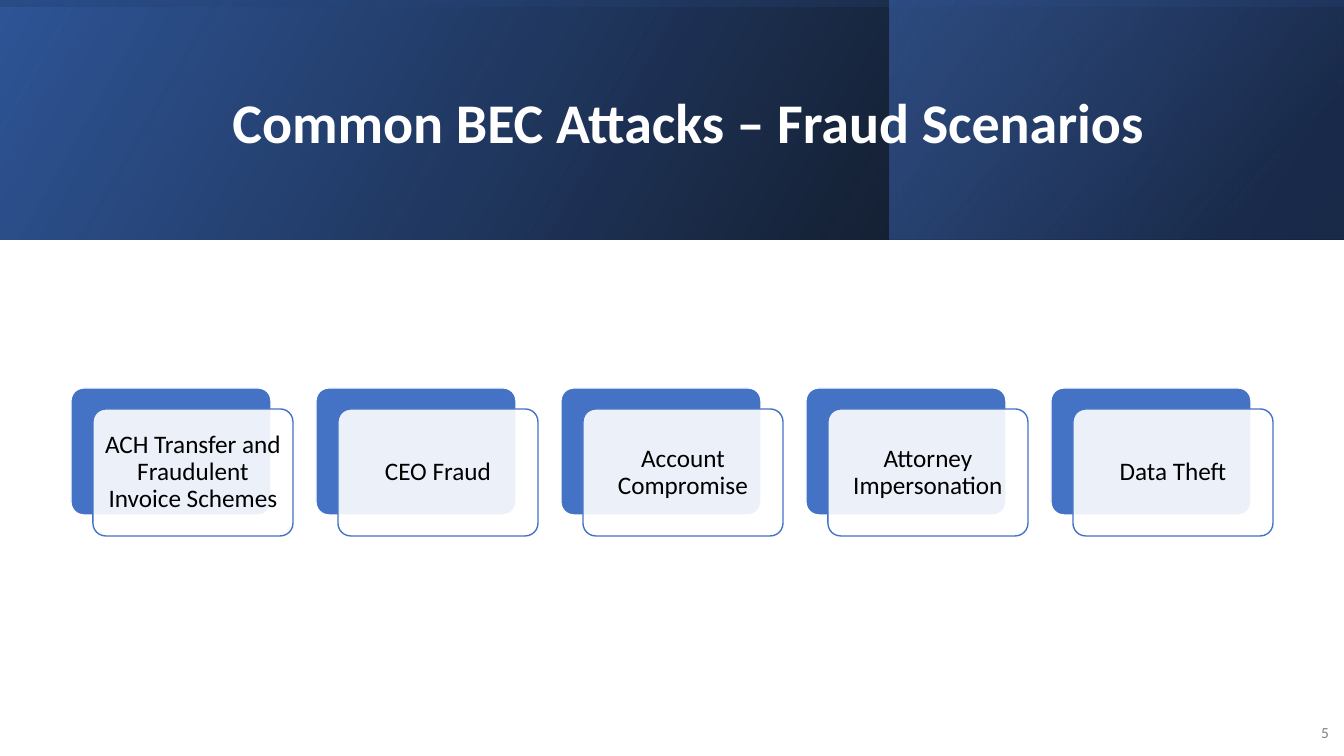
from lxml import etree
from pptx import Presentation
from pptx.dml.color import RGBColor
from pptx.enum.shapes import MSO_SHAPE
from pptx.enum.text import MSO_ANCHOR, PP_ALIGN
from pptx.oxml import parse_xml
from pptx.oxml.ns import nsdecls, qn
from pptx.util import Pt

THEME = {
    "font": "Calibri",
    "white": "FFFFFF", "black": "000000", "grey": "808080",
    "blue": "4472C4", "deep": "2F5597", "navy": "203864",
    "title": 40, "card": 18, "number": 11,
}
PX = 914400 / 100.8


def add_box(shapes, kind, left, top, width, height):
    box = [round(v * PX) for v in (left, top, width, height)]
    if kind is None:
        return shapes.add_textbox(*box)
    sp = shapes.add_shape(kind, *box)
    sp.shadow.inherit = False
    return sp


def write(sp, text, size, color, align, margin, bold=False, spacing=0.9):
    tf = sp.text_frame
    frame = {"word_wrap": True, "vertical_anchor": MSO_ANCHOR.MIDDLE}
    frame.update({f"margin_{side}": round(margin * PX)
                  for side in ("left", "top", "right", "bottom")})
    p = tf.paragraphs[0]
    r = p.add_run()
    r.text = text
    font = {"name": THEME["font"], "size": Pt(THEME[size]), "bold": bold}
    para = {"alignment": align, "line_spacing": spacing}
    for target, values in ((tf, frame), (p, para), (r.font, font)):
        for name, value in values.items():
            setattr(target, name, value)
    r.font.color.rgb = RGBColor.from_string(THEME[color])


prs = Presentation()
prs.slide_width, prs.slide_height = round(1344 * PX), round(756 * PX)
s = prs.slides.add_slide(prs.slide_layouts[6])

# Header band: three mirrored gradients; stops are position, colour, opacity
BANDS = [
    ((0, 0, 1344, 240), 0, 330, [(0, "black", 96), (100, "deep", 100)]),
    ((890, 0, 453, 240), 0, 320, [(19, "navy", 68), (100, "blue", 48)]),
    ((552, -552, 240, 1344), 270, 350, [(23, "deep", 16), (99, "black", 45)]),
]
for box, rotation, angle, stops in BANDS:
    sp = add_box(s.shapes, MSO_SHAPE.RECTANGLE, *box)
    sp.rotation = rotation
    sp.line.fill.background()
    spPr = sp._element.spPr
    spPr.find(qn("a:xfrm")).set("flipH", "1")
    gs = "".join(
        f'<a:gs pos="{pos * 1000}"><a:srgbClr val="{THEME[color]}">'
        f'<a:alpha val="{alpha * 1000}"/></a:srgbClr></a:gs>'
        for pos, color, alpha in stops)
    spPr.find(qn("a:prstGeom")).addnext(parse_xml(
        f'<a:gradFill {nsdecls("a")} rotWithShape="1"><a:gsLst>{gs}</a:gsLst>'
        f'<a:lin ang="{angle * 60000}" scaled="0"/></a:gradFill>'))

# Title and slide number
sp = add_box(s.shapes, None, 152, 38, 1072, 174)
write(sp, "Common BEC Attacks – Fraud Scenarios", "title", "white",
      PP_ALIGN.CENTER, 5, bold=True)
sp = add_box(s.shapes, None, 1290, 712, 49, 40)
write(sp, "5", "number", "grey", PP_ALIGN.RIGHT, 10, spacing=1.0)

# Scenario cards: a blue back plate and a translucent front plate
SCENARIOS = ["ACH Transfer and Fraudulent Invoice Schemes", "CEO Fraud",
             "Account Compromise", "Attorney Impersonation", "Data Theft"]
LEFT, TOP, PITCH, SHIFT = 71, 388, 245, (22, 21)
PLATES = [((0, 0), "blue", "white"), (SHIFT, "white", "blue")]
for i, scenario in enumerate(SCENARIOS):
    group = s.shapes.add_group_shape()
    for (dx, dy), fill, line in PLATES:
        sp = add_box(group.shapes, MSO_SHAPE.ROUNDED_RECTANGLE,
                     LEFT + i * PITCH + dx, TOP + dy, 200, 127)
        sp.adjustments[0] = 0.1
        sp.fill.solid()
        sp.fill.fore_color.rgb = RGBColor.from_string(THEME[fill])
        sp.line.color.rgb = RGBColor.from_string(THEME[line])
        sp.line.width = Pt(1)
    # The last plate is the front one
    color = sp._element.spPr.find(qn("a:solidFill")).find(qn("a:srgbClr"))
    etree.SubElement(color, qn("a:alpha")).set("val", "90000")
    write(sp, scenario, "card", "black", PP_ALIGN.CENTER, 6)

prs.save("out.pptx")
